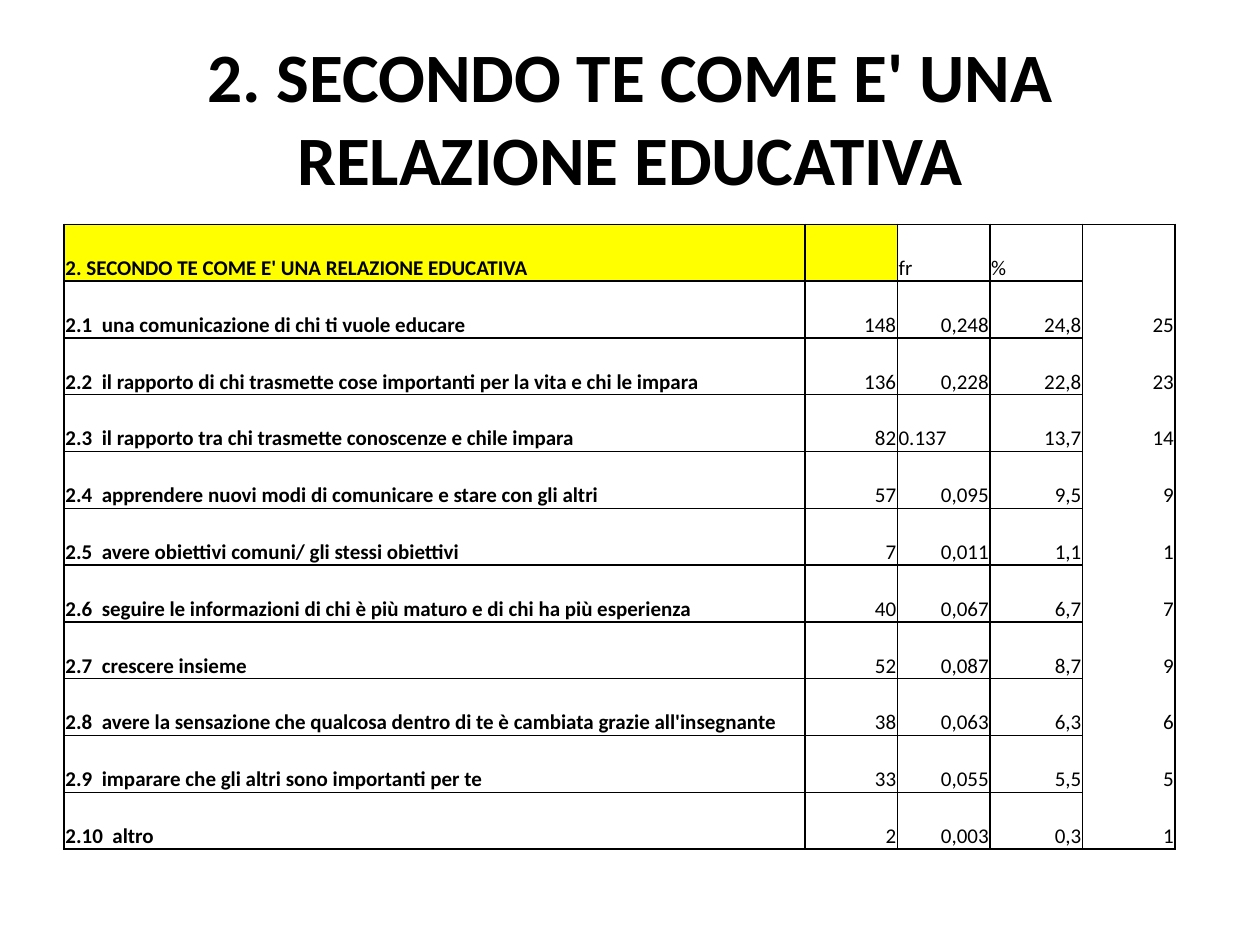
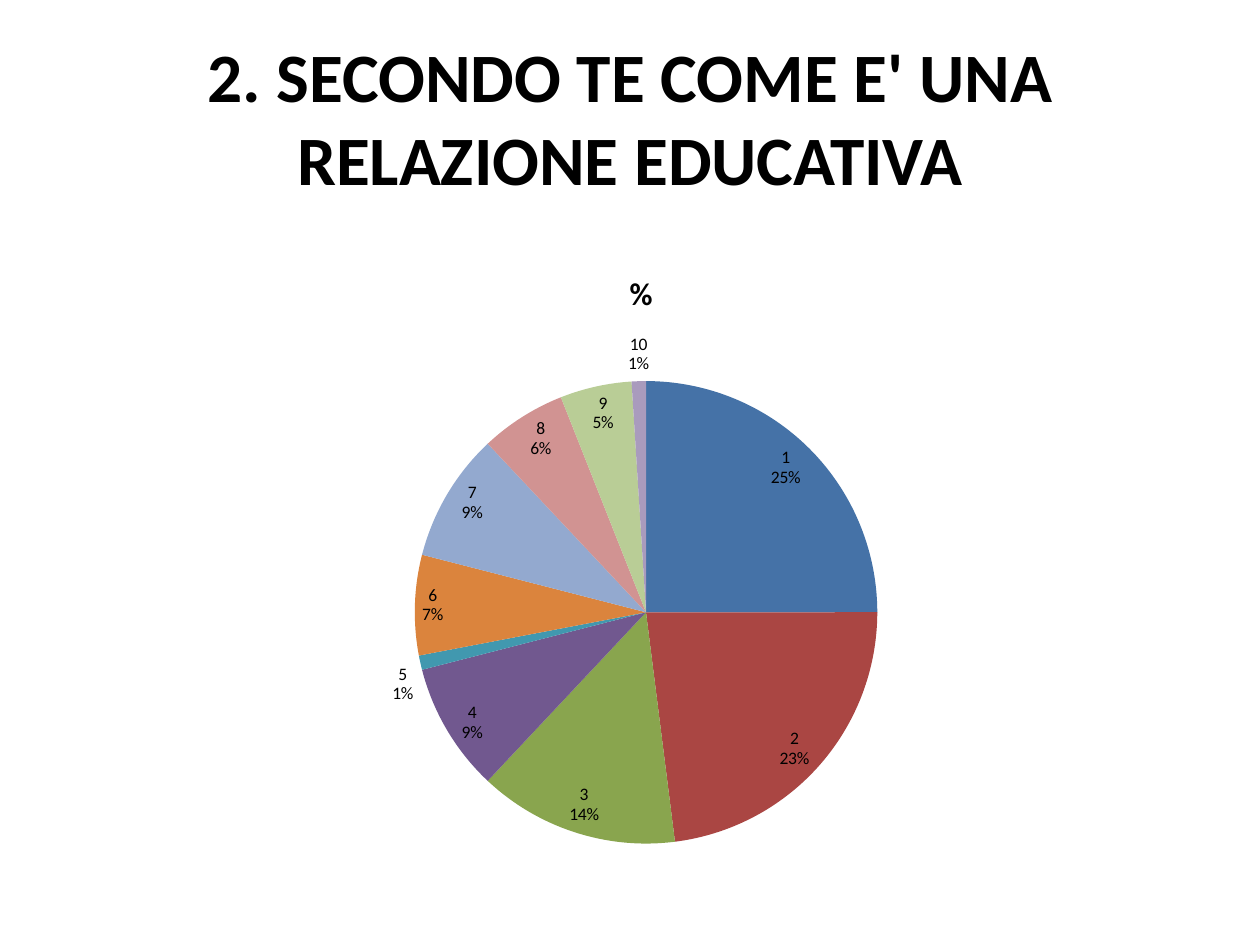
from lxml import etree
from pptx import Presentation
from pptx import util as u
from pptx.chart import data as chart_data
from pptx.dml import color
from pptx.enum import chart as ch, text
from pptx.oxml import ns

FONT = "Calibri"
COLORS = {"text": "000000", "border": "000000", "header": "FFFF00"}
SLICES = ["4572A7", "AA4643", "89A54E", "71588F", "4198AF",
          "DB843D", "93A9CF", "D19392", "B9CD96", "A99BBD"]
TITLE = "2. SECONDO TE COME E' UNA RELAZIONE EDUCATIVA"
LABEL_COLS = 7
ROWS = [
    (5, TITLE, "", "fr", "%", ""),
    (4, "2.1  una comunicazione di chi ti vuole educare", "148", "0,248", "24,8", "25"),
    (7, "2.2  il rapporto di chi trasmette cose importanti per la vita e chi le impara",
     "136", "0,228", "22,8", "23"),
    (5, "2.3  il rapporto tra chi trasmette conoscenze e chile impara",
     "82", "0.137", "13,7", "14"),
    (5, "2.4  apprendere nuovi modi di comunicare e stare con gli altri",
     "57", "0,095", "9,5", "9"),
    (4, "2.5  avere obiettivi comuni/ gli stessi obiettivi", "7", "0,011", "1,1", "1"),
    (7, "2.6  seguire le informazioni di chi è più maturo e di chi ha più esperienza",
     "40", "0,067", "6,7", "7"),
    (2, "2.7  crescere insieme", "52", "0,087", "8,7", "9"),
    (7, "2.8  avere la sensazione che qualcosa dentro di te è cambiata grazie all'insegnante",
     "38", "0,063", "6,3", "6"),
    (4, "2.9  imparare che gli altri sono importanti per te", "33", "0,055", "5,5", "5"),
    (1, "2.10  altro", "2", "0,003", "0,3", "1"),
]


def rgb(name):
    return color.RGBColor.from_string(COLORS.get(name, name))


def style_font(font, size, bold=False):
    font.name = FONT
    font.size = u.Pt(size)
    font.bold = bold
    font.color.rgb = rgb("text")


def add_titled_slide(prs):
    s = prs.slides.add_slide(prs.slide_layouts[5])
    sp = s.shapes.title
    sp.left, sp.top, sp.width, sp.height = map(u.Inches, (0.5, 0.3, 9, 1.25))
    tf = sp.text_frame
    tf.text = TITLE
    tf.auto_size = text.MSO_AUTO_SIZE.NONE
    tf.vertical_anchor = text.MSO_ANCHOR.MIDDLE
    p = tf.paragraphs[0]
    p.alignment = text.PP_ALIGN.CENTER
    style_font(p.runs[0].font, 39.6, True)
    return s


def set_borders(cell, sides):
    tcPr = cell._tc.get_or_add_tcPr()
    for side in "LRTB":
        ln = etree.SubElement(tcPr, ns.qn(f"a:ln{side}"), w=str(u.Pt(1)))
        if side in sides:
            fill = etree.SubElement(ln, ns.qn("a:solidFill"))
            etree.SubElement(fill, ns.qn("a:srgbClr"), val=COLORS["border"])
        else:
            etree.SubElement(ln, ns.qn("a:noFill"))


def border_sides(row, col, end):
    if col < LABEL_COLS:
        return "TB" + ("L" if col == 0 else "") + ("R" if end == LABEL_COLS - 1 else "")
    if col < LABEL_COLS + 3:
        return "LRTB"
    return "LR" + ("T" if row == 0 else "") + ("B" if row == len(ROWS) - 1 else "")


def write_cell(cell, value, bold, align):
    cell.vertical_anchor = text.MSO_ANCHOR.BOTTOM
    cell.margin_left = cell.margin_right = cell.margin_top = u.Inches(0.01)
    cell.margin_bottom = 0
    p = cell.text_frame.paragraphs[0]
    p.text = value
    p.alignment = align
    style_font(p.font, 12, bold)
    for r in p.runs:
        style_font(r.font, 12, bold)


def add_answer_table(s):
    cols = LABEL_COLS + 4
    frame = s.shapes.add_table(len(ROWS), cols, u.Inches(0.51), u.Inches(1.78),
                               u.Inches(8.82), u.Inches(4.96))
    table = frame.table
    table.first_row = table.horz_banding = False
    for i, column in enumerate(table.columns):
        column.width = u.Inches(1.47 if i == 0 else 0.735)
    for row in table.rows:
        row.height = u.Inches(4.96 / len(ROWS))
    for i, (span, label, *values) in enumerate(ROWS):
        cells = [label] + [""] * (LABEL_COLS - 1) + values
        for j, value in enumerate(cells):
            cell = table.cell(i, j)
            left = j < LABEL_COLS or i == 0 or "." in value
            write_cell(cell, value, j == 0,
                       text.PP_ALIGN.LEFT if left else text.PP_ALIGN.RIGHT)
            set_borders(cell, border_sides(i, j, span - 1 if j == 0 else j))
            if i == 0 and j <= LABEL_COLS:
                cell.fill.solid()
                cell.fill.fore_color.rgb = rgb("header")
            else:
                cell.fill.background()
        if span > 1:
            table.cell(i, 0).merge(table.cell(i, span - 1))


def set_layout(parent, index, **fractions):
    for old in parent.findall(ns.qn("c:layout")):
        parent.remove(old)
    layout = etree.Element(ns.qn("c:layout"))
    parent.insert(index, layout)
    manual = etree.SubElement(layout, ns.qn("c:manualLayout"))
    if "w" in fractions:
        etree.SubElement(manual, ns.qn("c:layoutTarget"), val="inner")
    for key in "xy":
        etree.SubElement(manual, ns.qn(f"c:{key}Mode"), val="edge")
    for key, value in fractions.items():
        etree.SubElement(manual, ns.qn(f"c:{key}"), val=str(value))


def add_answer_pie(s):
    data = chart_data.CategoryChartData()
    data.categories = [str(n) for n in range(1, len(ROWS))]
    data.add_series("%", [int(row[-1]) for row in ROWS[1:]])
    frame = s.shapes.add_chart(ch.XL_CHART_TYPE.PIE, u.Inches(0.67), u.Inches(1.86),
                               u.Inches(8.74), u.Inches(4.96), data)
    chart = frame.chart
    style_font(chart.font, 10)
    chart.has_legend = False
    chart.has_title = True
    tf = chart.chart_title.text_frame
    tf.text = "%"
    style_font(tf.paragraphs[0].runs[0].font, 18, True)
    chart.chart_title.include_in_layout = False
    set_layout(chart.chart_title._element, 1, x=0.49, y=0.05)
    set_layout(chart._chartSpace.chart.plotArea, 0, x=0.3, y=0.23, w=0.42, h=0.75)

    plot = chart.plots[0]
    plot.vary_by_categories = True
    for i, fill_color in enumerate(SLICES):
        fill = plot.series[0].points[i].format.fill
        fill.solid()
        fill.fore_color.rgb = rgb(fill_color)
    plot.has_data_labels = True
    labels = plot.data_labels
    labels.show_category_name = labels.show_percentage = True
    labels.show_value = False
    labels.number_format = "0%"
    labels.number_format_is_linked = False
    labels.position = ch.XL_LABEL_POSITION.BEST_FIT
    style_font(labels.font, 10)
    separator = etree.Element(ns.qn("c:separator"))
    separator.text = "\n"
    labels._element.find(ns.qn("c:showBubbleSize")).addnext(separator)


def main():
    prs = Presentation()
    prs.slide_width, prs.slide_height = u.Inches(10), u.Inches(7.5)
    add_answer_table(add_titled_slide(prs))
    add_answer_pie(add_titled_slide(prs))
    prs.save("out.pptx")


if __name__ == "__main__":
    main()
